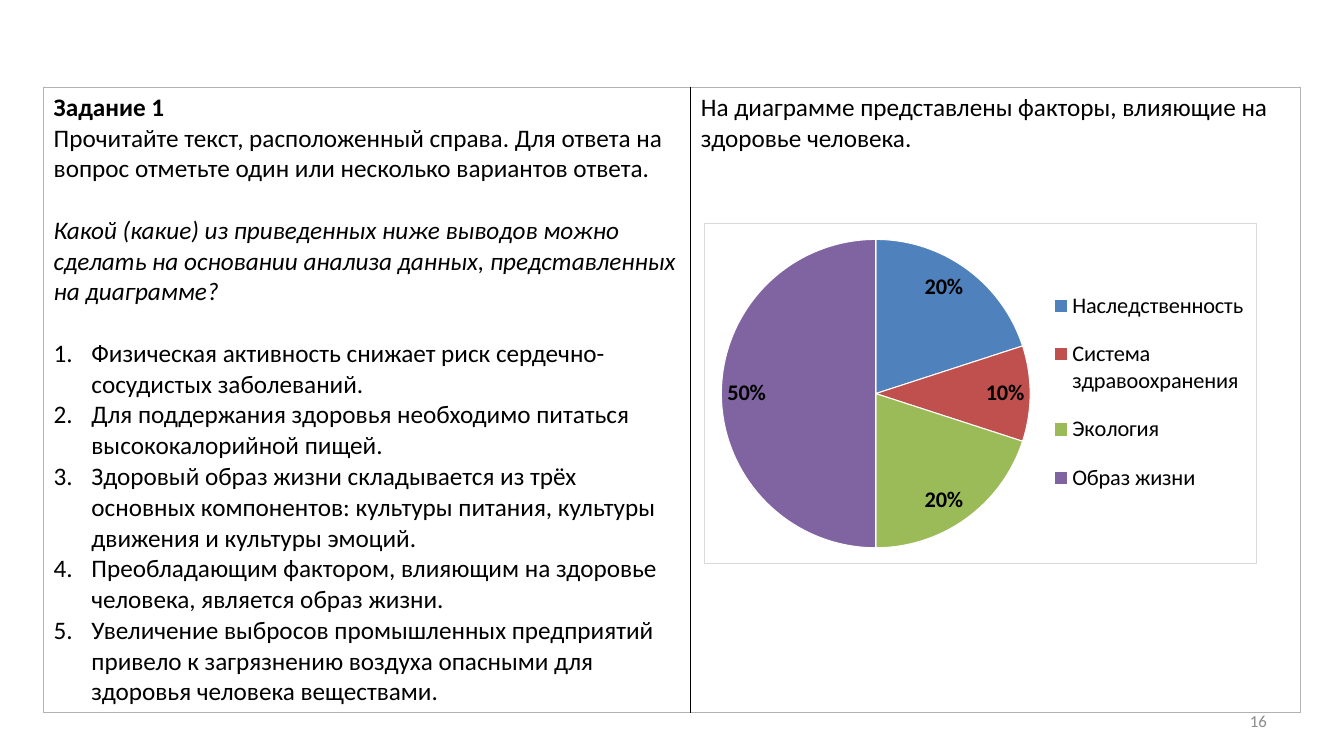
"""Build the task slide: a two-column table with a pie chart of health factors."""
import pptx
import pptx.chart.data
import pptx.dml.color
import pptx.enum.chart
import pptx.enum.text
import pptx.oxml
import pptx.oxml.ns
import pptx.util

Cm, Pt = pptx.util.Cm, pptx.util.Pt
RGBColor = pptx.dml.color.RGBColor

FONT = "Calibri"
BLACK = RGBColor(0x00, 0x00, 0x00)
WHITE = RGBColor(0xFF, 0xFF, 0xFF)
GREY = RGBColor(0x8C, 0x8C, 0x8C)
TABLE_EDGE = RGBColor(0xB2, 0xB2, 0xB2)
CHART_EDGE = RGBColor(0xD9, 0xD9, 0xD9)
BLUE = RGBColor(0x4F, 0x81, 0xBD)
RED = RGBColor(0xC0, 0x50, 0x4D)
GREEN = RGBColor(0x9B, 0xBB, 0x59)
PURPLE = RGBColor(0x80, 0x64, 0xA2)

HEADING = "Задание 1"
INSTRUCTION = ("Прочитайте текст, расположенный справа. Для ответа на вопрос "
               "отметьте один или несколько вариантов ответа.")
QUESTION = ("Какой (какие) из приведенных ниже выводов можно сделать на основании "
            "анализа данных, представленных на диаграмме?")
ANSWERS = [
    "Физическая активность снижает риск сердечно-сосудистых заболеваний.",
    "Для поддержания здоровья необходимо питаться высококалорийной пищей.",
    "Здоровый образ жизни складывается из трёх основных компонентов: "
    "культуры питания, культуры движения и культуры эмоций.",
    "Преобладающим фактором, влияющим на здоровье человека, является образ жизни.",
    "Увеличение выбросов промышленных предприятий привело к загрязнению воздуха "
    "опасными для здоровья человека веществами.",
]
CHART_INTRO = "На диаграмме представлены факторы, влияющие на здоровье человека."
FACTORS = [
    ("Наследственность", 0.2, BLUE),
    ("Система здравоохранения", 0.1, RED),
    ("Экология", 0.2, GREEN),
    ("Образ жизни", 0.5, PURPLE),
]
PAGE_NUMBER = "16"

COLUMN_WIDTHS = [Cm(16.31), Cm(15.37)]
TABLE_BOX = (Cm(1.1), Cm(2.2), sum(COLUMN_WIDTHS), Cm(15.5))
CHART_BOX = (Cm(17.75), Cm(5.63), Cm(13.92), Cm(8.58))
NUMBER_BOX = (Cm(24.28), Cm(17.66), Cm(7.9), Cm(1.01))
PLOT_LAYOUT = {"x": 0.03, "y": 0.04, "w": 0.56, "h": 0.92}
LEGEND_LAYOUT = {"x": 0.62, "y": 0.14, "w": 0.37, "h": 0.71}
BLANK_LINE = Pt(22)


def set_font(font, size, color=BLACK, **extra):
    """Apply the slide font with the given size, colour and extra attributes."""
    for name, value in {"name": FONT, "size": Pt(size), **extra}.items():
        setattr(font, name, value)
    font.color.rgb = color


def write_paragraph(text_frame, text, space_before=0, numbered=False, **style):
    """Add a paragraph, using the first empty one when there is no text yet."""
    paragraph = text_frame.add_paragraph() if text_frame.text else text_frame.paragraphs[0]
    paragraph.space_before = space_before
    run = paragraph.add_run()
    run.text = text
    set_font(run.font, 18, **style)
    if numbered:
        properties = paragraph._p.get_or_add_pPr()
        properties.set("marL", str(Cm(0.95)))
        properties.set("indent", str(-Cm(0.95)))
        number = pptx.oxml.parse_xml(
            f'<a:buAutoNum {pptx.oxml.ns.nsdecls("a")} type="arabicPeriod"/>')
        properties.append(number)


def set_borders(cell, colors):
    """Draw the left, right, top and bottom borders of a cell."""
    properties = cell._tc.get_or_add_tcPr()
    for index, (side, color) in enumerate(zip("LRTB", colors)):
        line = pptx.oxml.parse_xml(
            f'<a:ln{side} {pptx.oxml.ns.nsdecls("a")} w="{Pt(1)}">'
            f'<a:solidFill><a:srgbClr val="{color}"/></a:solidFill></a:ln{side}>')
        properties.insert(index, line)


def set_layout(element, layout, inner=False):
    """Give a chart part a manual layout in fractions of the chart."""
    for old in element.findall(pptx.oxml.ns.qn("c:layout")):
        element.remove(old)
    target = '<c:layoutTarget val="inner"/>' if inner else ""
    modes = "".join(f'<c:{key}Mode val="edge"/>' for key in "xy")
    values = "".join(f'<c:{key} val="{value}"/>' for key, value in layout.items())
    element.insert(0 if inner else 1, pptx.oxml.parse_xml(
        f'<c:layout {pptx.oxml.ns.nsdecls("c")}><c:manualLayout>'
        f'{target}{modes}{values}</c:manualLayout></c:layout>'))


def add_task_table(slide):
    """Add the table with the task on the left and the intro on the right."""
    table = slide.shapes.add_table(1, 2, *TABLE_BOX).table
    table.first_row = table.horz_banding = False
    for column, width in zip(table.columns, COLUMN_WIDTHS):
        column.width = width
    task, intro = table.cell(0, 0), table.cell(0, 1)
    for cell in (task, intro):
        cell.fill.background()
    set_borders(task, [TABLE_EDGE, BLACK, TABLE_EDGE, TABLE_EDGE])
    set_borders(intro, [BLACK, TABLE_EDGE, TABLE_EDGE, TABLE_EDGE])
    write_paragraph(task.text_frame, HEADING, bold=True)
    write_paragraph(task.text_frame, INSTRUCTION)
    write_paragraph(task.text_frame, QUESTION, BLANK_LINE, italic=True)
    for index, answer in enumerate(ANSWERS):
        write_paragraph(task.text_frame, answer, 0 if index else BLANK_LINE, numbered=True)
    write_paragraph(intro.text_frame, CHART_INTRO)


def add_factor_chart(slide):
    """Add the pie chart of factors."""
    names, shares, colors = zip(*FACTORS)
    data = pptx.chart.data.CategoryChartData(number_format="0%")
    data.categories = names
    data.add_series("Series 1", shares)
    chart = slide.shapes.add_chart(
        pptx.enum.chart.XL_CHART_TYPE.PIE, *CHART_BOX, data).chart
    chart.has_title = False
    set_font(chart.font, 10)
    chart.has_legend = True
    chart.legend.position = pptx.enum.chart.XL_LEGEND_POSITION.RIGHT
    chart.legend.include_in_layout = False
    set_font(chart.legend.font, 16)
    set_layout(chart.legend._element, LEGEND_LAYOUT)
    plot = chart.plots[0]
    plot.vary_by_categories = True
    set_layout(plot._element.getparent(), PLOT_LAYOUT, inner=True)
    series = plot.series[0]
    for index, color in enumerate(colors):
        point = series.points[index].format
        point.fill.solid()
        point.fill.fore_color.rgb = color
        point.line.color.rgb = WHITE
        point.line.width = Pt(0.75)
    label_format = {
        "show_value": True,
        "number_format": "0%",
        "number_format_is_linked": False,
        "position": pptx.enum.chart.XL_LABEL_POSITION.INSIDE_END,
    }
    for name, value in label_format.items():
        setattr(series.data_labels, name, value)
    set_font(series.data_labels.font, 16, bold=True)
    frame = pptx.oxml.parse_xml(
        f'<c:spPr {pptx.oxml.ns.nsdecls("c", "a")}><a:noFill/><a:ln w="{Pt(0.75)}">'
        f'<a:solidFill><a:srgbClr val="{CHART_EDGE}"/></a:solidFill></a:ln></c:spPr>')
    chart._chartSpace.find(pptx.oxml.ns.qn("c:chart")).addnext(frame)


def add_page_number(slide):
    """Add the page number at the lower right."""
    text_frame = slide.shapes.add_textbox(*NUMBER_BOX).text_frame
    text_frame.word_wrap = True
    text_frame.vertical_anchor = pptx.enum.text.MSO_ANCHOR.MIDDLE
    paragraph = text_frame.paragraphs[0]
    paragraph.alignment = pptx.enum.text.PP_ALIGN.RIGHT
    run = paragraph.add_run()
    run.text = PAGE_NUMBER
    set_font(run.font, 12, GREY)


def main():
    """Build and save the presentation."""
    presentation = pptx.Presentation()
    presentation.slide_width, presentation.slide_height = Cm(33.87), Cm(19.05)
    slide = presentation.slides.add_slide(presentation.slide_layouts[6])
    add_task_table(slide)
    add_page_number(slide)
    add_factor_chart(slide)
    presentation.save("out.pptx")


if __name__ == "__main__":
    main()
